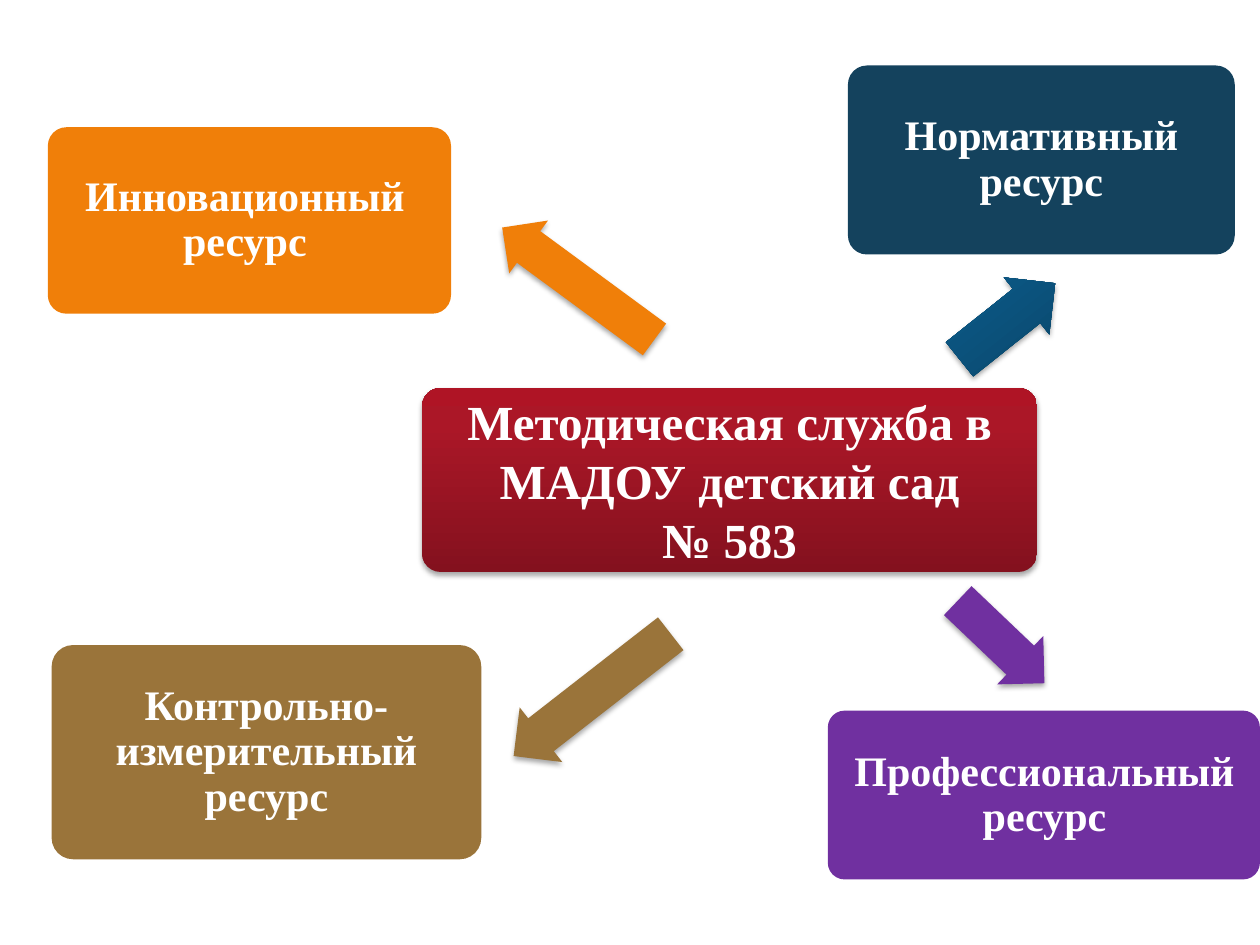
from copy import deepcopy

from lxml.etree import SubElement
from pptx import Presentation
from pptx.dml.color import RGBColor
from pptx.enum.shapes import MSO_SHAPE
from pptx.enum.text import MSO_ANCHOR, PP_ALIGN
from pptx.oxml.ns import qn
from pptx.util import Inches, Pt

FONT = "Times New Roman"
WHITE = "FFFFFF"
ORANGE, BROWN, PURPLE, NAVY = "F07F09", "9A743A", "7030A0", "14425D"
RED_GRADIENT = [(0, "84111E"), (0.8, "AB1727"), (1, "AF1425")]
BLUE_GRADIENT = [(0, "094467"), (0.8, "0C5986"), (1, "0A5A89")]

CENTER_TEXT = ["Методическая служба в МАДОУ детский сад", "№ 583"]
CENTER_BOX = (3.35, 3.08, 4.88, 1.46)

# text, (left, top, width, height), fill, (left inset, right inset)
RESOURCES = [
    ("Контрольно-измерительный ресурс", (0.41, 5.12, 3.41, 1.7), BROWN, (0.17, 0.17)),
    ("Инновационный ресурс", (0.38, 1.01, 3.2, 1.48), ORANGE, (0.1, 0.17)),
    ("Профессиональный ресурс", (6.57, 5.64, 3.43, 1.34), PURPLE, (0.12, 0.11)),
    ("Нормативный ресурс", (6.73, 0.52, 3.07, 1.5), NAVY, (0.11, 0.11)),
]

# (left, top, width, height), rotation, fill
ARROWS = [
    ((3.84, 1.99, 1.5, 0.52), 216.3, ORANGE),
    ((7.51, 2.26, 0.97, 0.58), 321.5, BLUE_GRADIENT),
    ((3.91, 5.24, 1.58, 0.55), 142.1, BROWN),
    ((7.47, 4.83, 0.95, 0.53), 43.6, PURPLE),
]


def rgb(color):
    return RGBColor.from_string(color)


def set_fill(sp, fill):
    """Apply a solid hex colour or a three-stop gradient running upwards."""
    if isinstance(fill, str):
        sp.fill.solid()
        sp.fill.fore_color.rgb = rgb(fill)
        return
    sp.fill.gradient()
    sp.fill.gradient_angle = 90
    stops = sp._element.spPr.find(qn("a:gradFill")).find(qn("a:gsLst"))
    stops.append(deepcopy(stops[-1]))
    for stop, (position, color) in zip(sp.fill.gradient_stops, fill):
        stop.position = position
        stop.color.rgb = rgb(color)


def add_shadow(sp):
    effects = sp._element.spPr.find(qn("a:effectLst"))
    shadow = SubElement(effects, qn("a:outerShdw"), blurRad=str(Pt(3.1)),
                        dist=str(Pt(1.8)), dir="5400000", rotWithShape="0")
    color = SubElement(shadow, qn("a:srgbClr"), val="000000")
    SubElement(color, qn("a:alpha"), val="35000")


def add_shape(slide, preset, box, fill, adjustments):
    sp = slide.shapes.add_shape(preset, *map(Inches, box))
    for i, value in enumerate(adjustments):
        sp.adjustments[i] = value
    set_fill(sp, fill)
    sp.line.fill.background()
    sp.shadow.inherit = False
    return sp


def add_card(slide, lines, box, fill, size, insets, spacing):
    sp = add_shape(slide, MSO_SHAPE.ROUNDED_RECTANGLE, box, fill, [0.1])
    tf = sp.text_frame
    tf.word_wrap = True
    tf.vertical_anchor = MSO_ANCHOR.MIDDLE
    tf.margin_left, tf.margin_right = map(Inches, insets)
    tf.margin_top = tf.margin_bottom = Inches(0.07)
    tf.text = "\n".join(lines)
    for p in tf.paragraphs:
        p.alignment = PP_ALIGN.CENTER
        p.line_spacing = spacing
        for r in p.runs:
            r.font.name = FONT
            r.font.size = Pt(size)
            r.font.bold = True
            r.font.color.rgb = rgb(WHITE)
    return sp


def main():
    prs = Presentation()
    prs.slide_width, prs.slide_height = Inches(10), Inches(7.5)
    slide = prs.slides.add_slide(prs.slide_layouts[6])

    center = add_card(slide, CENTER_TEXT, CENTER_BOX, RED_GRADIENT, 28, (0.08, 0.08), 1.0)
    add_shadow(center)
    for text, box, fill, insets in RESOURCES:
        add_card(slide, [text], box, fill, 24, insets, 0.9)
    for box, rotation, fill in ARROWS:
        arrow = add_shape(slide, MSO_SHAPE.RIGHT_ARROW, box, fill, [0.6, 0.5])
        arrow.rotation = rotation
        add_shadow(arrow)

    prs.save("out.pptx")


if __name__ == "__main__":
    main()
